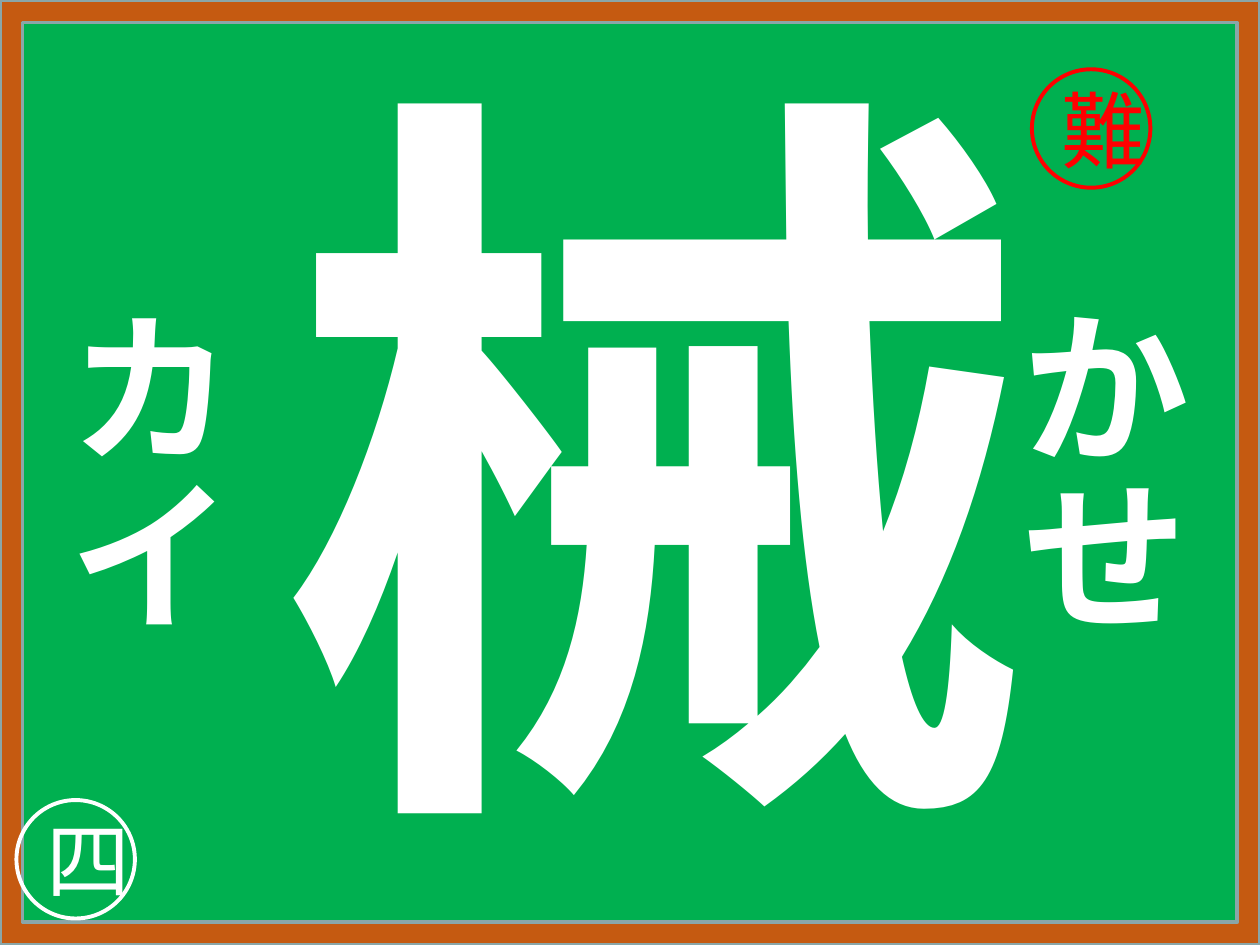
from dataclasses import dataclass

import pptx
import pptx.dml.color
import pptx.enum.shapes
import pptx.enum.text
import pptx.oxml
import pptx.oxml.ns
import pptx.util

Pt = pptx.util.Pt
RGBColor = pptx.dml.color.RGBColor
ShapeKind = pptx.enum.shapes.MSO_SHAPE
Anchor = pptx.enum.text.MSO_ANCHOR

FONT = "Noto Sans CJK JP"
BOARD_GREEN = RGBColor(0x00, 0xB0, 0x50)
FRAME_BROWN = RGBColor(0xC5, 0x5A, 0x11)
FRAME_EDGE = RGBColor(0x8A, 0xA6, 0xA8)
CHALK_WHITE = RGBColor(0xFF, 0xFF, 0xFF)
MARK_RED = RGBColor(0xFF, 0x00, 0x00)

SLIDE_WIDTH, SLIDE_HEIGHT = 720, 540
READING_TOP, READING_WIDTH, READING_HEIGHT = 166.3, 131, 197.3
BADGE_SIZE = 67.7


@dataclass
class VerticalText:
    text: str
    left: float
    top: float
    width: float
    height: float
    size: float
    anchor: Anchor
    wrap: bool


@dataclass
class Badge:
    text: str
    left: float
    top: float
    color: RGBColor


VERTICAL_TEXTS = [
    VerticalText("械", 130.3, 39.6, 459.4, 451.4, 432, Anchor.MIDDLE, True),
    VerticalText("かせ", 558.7, READING_TOP, READING_WIDTH, READING_HEIGHT, 96, Anchor.TOP, False),
    VerticalText("カイ", 13, READING_TOP, READING_WIDTH, READING_HEIGHT, 96, Anchor.TOP, False),
]
BADGES = [
    Badge("四", 9.4, 457.2, CHALK_WHITE),
    Badge("難", 589.7, 39.6, MARK_RED),
]


def write_text(text_frame, text: str, size: float, color: RGBColor, bold: bool) -> None:
    text_frame.text = text
    paragraph = text_frame.paragraphs[0]
    paragraph.alignment = pptx.enum.text.PP_ALIGN.CENTER
    font = paragraph.runs[0].font
    font.name = FONT
    font.size = Pt(size)
    font.bold = bold
    font.color.rgb = color
    # East Asian glyphs take their typeface from a:ea
    properties = paragraph.runs[0]._r.get_or_add_rPr()
    east_asian = pptx.oxml.parse_xml(
        f'<a:ea {pptx.oxml.ns.nsdecls("a")} typeface="{FONT}"/>'
    )
    properties.find(pptx.oxml.ns.qn("a:latin")).addnext(east_asian)


def draw_frame(slide) -> None:
    frame = slide.shapes.add_shape(
        ShapeKind.FRAME, 0, 0, Pt(SLIDE_WIDTH), Pt(SLIDE_HEIGHT)
    )
    frame.shadow.inherit = False
    frame.adjustments[0] = 0.024
    frame.fill.solid()
    frame.fill.fore_color.rgb = FRAME_BROWN
    frame.line.color.rgb = FRAME_EDGE
    frame.line.width = Pt(2)


def draw_vertical_text(slide, item: VerticalText) -> None:
    box = slide.shapes.add_textbox(
        Pt(item.left), Pt(item.top), Pt(item.width), Pt(item.height)
    )
    text_frame = box.text_frame
    text_frame.word_wrap = item.wrap
    text_frame.vertical_anchor = item.anchor
    if not item.wrap:
        text_frame.auto_size = pptx.enum.text.MSO_AUTO_SIZE.SHAPE_TO_FIT_TEXT
    text_frame._txBody.bodyPr.set("vert", "eaVert")
    write_text(text_frame, item.text, item.size, CHALK_WHITE, bold=True)


def draw_badge(slide, badge: Badge) -> None:
    circle = slide.shapes.add_shape(
        ShapeKind.OVAL, Pt(badge.left), Pt(badge.top), Pt(BADGE_SIZE), Pt(BADGE_SIZE)
    )
    circle.shadow.inherit = False
    circle.fill.background()
    circle.line.color.rgb = badge.color
    circle.line.width = Pt(2.25)
    circle.text_frame.word_wrap = True
    circle.text_frame.vertical_anchor = Anchor.MIDDLE
    write_text(circle.text_frame, badge.text, 48, badge.color, bold=False)


def main() -> None:
    presentation = pptx.Presentation()
    presentation.slide_width = Pt(SLIDE_WIDTH)
    presentation.slide_height = Pt(SLIDE_HEIGHT)
    slide = presentation.slides.add_slide(presentation.slide_layouts[6])

    # Blackboard with wooden frame
    slide.background.fill.solid()
    slide.background.fill.fore_color.rgb = BOARD_GREEN
    draw_frame(slide)

    # Kanji and its readings
    for item in VERTICAL_TEXTS:
        draw_vertical_text(slide, item)

    # Grade and difficulty badges
    for badge in BADGES:
        draw_badge(slide, badge)

    presentation.save("out.pptx")


if __name__ == "__main__":
    main()
